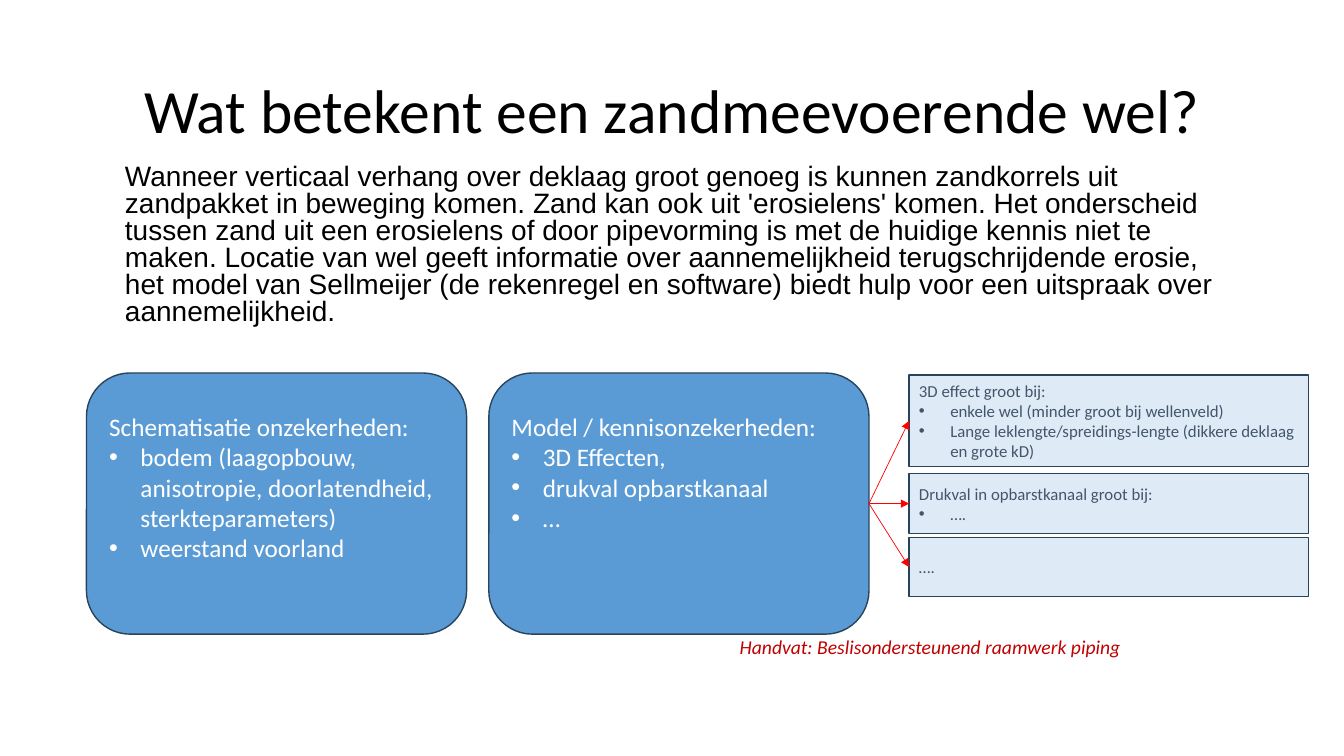
from lxml import etree
from pptx import Presentation, util as u
from pptx.dml.color import RGBColor
from pptx.enum import shapes, text
from pptx.oxml import ns

# Content
TITLE = "Wat betekent een zandmeevoerende wel?"
INTRO = (
    "Wanneer verticaal verhang over deklaag groot genoeg is kunnen zandkorrels "
    "uit zandpakket in beweging komen. Zand kan ook uit 'erosielens' komen. "
    "Het onderscheid tussen zand uit een erosielens of door pipevorming is met "
    "de huidige kennis niet te maken. Locatie van wel geeft informatie over "
    "aannemelijkheid terugschrijdende erosie, het model van Sellmeijer (de "
    "rekenregel en software) biedt hulp voor een uitspraak over "
    "aannemelijkheid.")
CAUSES = [
    ("Schematisatie onzekerheden:",
     ["bodem (laagopbouw, anisotropie, doorlatendheid, sterkteparameters)",
      "weerstand voorland"]),
    ("Model / kennisonzekerheden:",
     ["3D Effecten,", "drukval opbarstkanaal", "…"]),
]
# Top, height, heading, bullets
NOTES = [
    (9.45, 2.31, "3D effect groot bij:",
     ["enkele wel (minder groot bij wellenveld)",
      "Lange leklengte/spreidings-lengte (dikkere deklaag en grote kD)"]),
    (11.94, 1.5, "Drukval in opbarstkanaal groot bij:", ["…."]),
    (13.54, 1.5, "….", []),
]
HINT = "Handvat: Beslisondersteunend raamwerk piping"

# Layout in cm
LEFT, TOP, WIDE, HIGH, STEP = 2.18, 9.4, 9.58, 6.58, 10.14
NOTE_X, NOTE_W = 22.91, 10.06
EDGE = "28445D"

deck = Presentation()
deck.slide_width, deck.slide_height = u.Cm(33.87), u.Cm(19.05)
slide = deck.slides.add_slide(deck.slide_layouts[6])


def color(code):
    return RGBColor.from_string(code)


def add_par(frame, words, size, ink, face="Calibri", bullet=False):
    first = not frame.paragraphs[0].runs
    par = frame.paragraphs[0] if first else frame.add_paragraph()
    par.alignment = text.PP_ALIGN.LEFT
    if bullet:
        props = par._p.get_or_add_pPr()
        props.set("marL", str(u.Cm(0.79)))
        props.set("indent", str(-u.Cm(0.79)))
        font = etree.SubElement(props, ns.qn("a:buFont"))
        font.set("typeface", "Arial")
        etree.SubElement(props, ns.qn("a:buChar")).set("char", "•")
    run = par.add_run()
    run.text = words
    run.font.size, run.font.name = u.Pt(size), face
    run.font.color.rgb = color(ink)
    return par


def add_text(box, words, size, ink, face="Calibri"):
    frame = slide.shapes.add_textbox(*map(u.Cm, box)).text_frame
    frame.word_wrap = True
    return add_par(frame, words, size, ink, face)


def add_box(kind, box, fill, head, items, size, ink):
    shape = slide.shapes.add_shape(kind, *map(u.Cm, box))
    shape.shadow.inherit = False
    shape.fill.solid()
    shape.fill.fore_color.rgb = color(fill)
    shape.line.color.rgb = color(EDGE)
    shape.line.width = u.Pt(1)
    frame = shape.text_frame
    frame.word_wrap = True
    frame.vertical_anchor = text.MSO_ANCHOR.MIDDLE
    add_par(frame, head, size, ink)
    for item in items:
        add_par(frame, item, size, ink, bullet=True)
    return frame


def add_arrow(x1, y1, x2, y2):
    line = slide.shapes.add_connector(
        shapes.MSO_CONNECTOR.STRAIGHT, *map(u.Cm, (x1, y1, x2, y2)))
    line.line.color.rgb = color("FF0000")
    line.line.width = u.Pt(0.5)
    tip = etree.SubElement(line.line._get_or_add_ln(), ns.qn("a:tailEnd"))
    tip.set("type", "triangle")
    etree.SubElement(line._element.spPr, ns.qn("a:effectLst"))


# Title and intro
title = add_text((2.34, 1.02, 29.21, 3.68), TITLE, 44, "000000")
title.alignment = text.PP_ALIGN.CENTER
title.line_spacing = 0.9
slide.shapes[0].text_frame.vertical_anchor = text.MSO_ANCHOR.MIDDLE
intro = add_text((2.9, 4.04, 28.63, 4.32), INTRO, 20, "000000", "Arial")
intro.line_spacing = 0.8

# Uncertainty boxes
for i, (head, items) in enumerate(CAUSES):
    frame = add_box(shapes.MSO_SHAPE.ROUNDED_RECTANGLE,
                    (LEFT + i * STEP, TOP, WIDE, HIGH),
                    "5B9BD5", head, items, 18, "FFFFFF")
    frame.vertical_anchor = text.MSO_ANCHOR.TOP
    frame.margin_top = u.Cm(0.65)

# Notes, each with an arrow from the model box
for top, high, head, items in NOTES:
    add_box(shapes.MSO_SHAPE.RECTANGLE, (NOTE_X, top, NOTE_W, high),
            "DEEBF7", head, items, 12, "44546A")
    add_arrow(LEFT + STEP + WIDE, TOP + HIGH / 2, NOTE_X, top + high / 2)

# Closing hint
hint = add_text((18.39, 15.88, 15, 0.86), HINT, 14, "C00000")
hint.runs[0].font.italic = True

deck.save("out.pptx")
